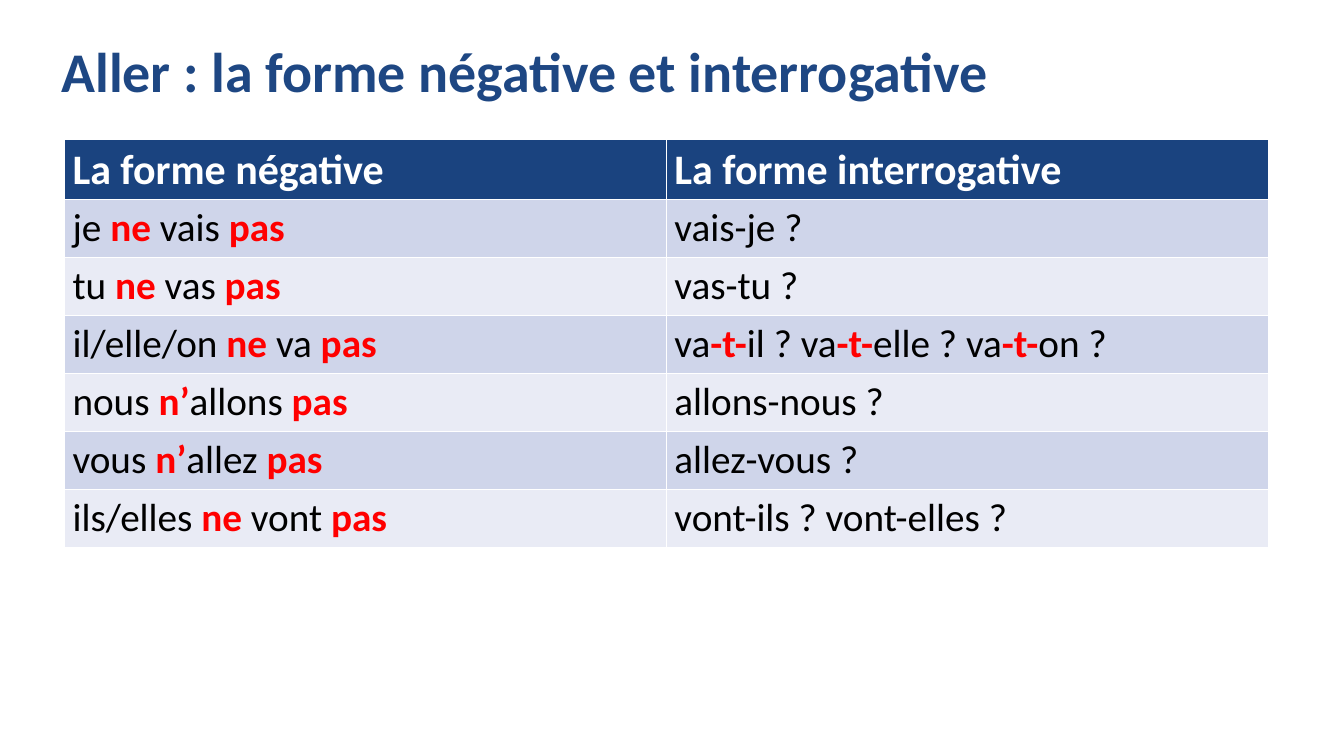
from dataclasses import dataclass

from pptx import Presentation
from pptx import util as u
from pptx.dml.color import RGBColor
from pptx.enum import text

WIDE, HIGH = u.Inches(13.33), u.Inches(7.5)
NAVY, WHITE, BLACK, RED = "1A437F", "FFFFFF", "000000", "FF0000"
BANDS = ("CFD5EA", "E9EBF5")


@dataclass
class Style:
    size: int
    hue: str
    bold: bool = False


TITLE = Style(40, "1E4783", True)
HEAD = Style(30, WHITE, True)
BODY = Style(28, BLACK)
STRESS = Style(28, RED, True)

# Asterisks enclose the stressed parts.
ROWS = [
    ("La forme négative", "La forme interrogative"),
    ("je *ne *vais *pas*", "vais-je ?"),
    ("tu *ne *vas *pas*", "vas-tu ?"),
    ("il/elle/on *ne *va *pas*", "va*-t-*il ? va*-t-*elle ? va*-t-*on ?"),
    ("nous *n’*allons *pas*", "allons-nous ?"),
    ("vous *n’*allez *pas*", "allez-vous ?"),
    ("ils/elles *ne *vont *pas*", "vont-ils ? vont-elles ?"),
]


def tint(code: str) -> RGBColor:
    return RGBColor.from_string(code)


def write(para, words: str, style: Style) -> None:
    """Add the words as runs, with the parts between asterisks stressed."""
    for i, part in enumerate(words.split("*")):
        if part:
            look = STRESS if i % 2 else style
            run = para.add_run()
            run.text = part
            form = {"name": "Calibri", "size": u.Pt(look.size), "bold": look.bold}
            for key, value in form.items():
                setattr(run.font, key, value)
            run.font.color.rgb = tint(look.hue)


def add_title(slide, words: str) -> None:
    box = slide.shapes.add_textbox(
        int(WIDE * 0.0383), int(HIGH * 0.0533), int(WIDE * 0.8627), int(HIGH * 0.0907))
    frame = box.text_frame
    form = {"word_wrap": True, "vertical_anchor": text.MSO_ANCHOR.MIDDLE}
    for key, value in form.items():
        setattr(frame, key, value)
    para = frame.paragraphs[0]
    para.line_spacing = 0.9
    write(para, words, TITLE)


def add_forms(slide) -> None:
    grid = slide.shapes.add_table(
        len(ROWS), len(ROWS[0]), int(WIDE * 0.048), int(HIGH * 0.184),
        int(WIDE * 0.8957), int(HIGH * 0.54)).table
    for r, row in enumerate(ROWS):
        grid.rows[r].height = int(HIGH * (0.0767 if r else 0.08))
        for c, words in enumerate(row):
            cell = grid.cell(r, c)
            pads = {"margin_left": 0.08, "margin_right": 0.08,
                    "margin_top": 0.05, "margin_bottom": 0.05}
            for key, value in pads.items():
                setattr(cell, key, u.Inches(value))
            cell.fill.solid()
            cell.fill.fore_color.rgb = tint(BANDS[(r - 1) % 2] if r else NAVY)
            write(cell.text_frame.paragraphs[0], words, BODY if r else HEAD)


def main() -> None:
    deck = Presentation()
    deck.slide_width, deck.slide_height = WIDE, HIGH
    slide = deck.slides.add_slide(deck.slide_layouts[6])
    add_title(slide, "Aller : la forme négative et interrogative")
    add_forms(slide)
    deck.save("out.pptx")


if __name__ == "__main__":
    main()
